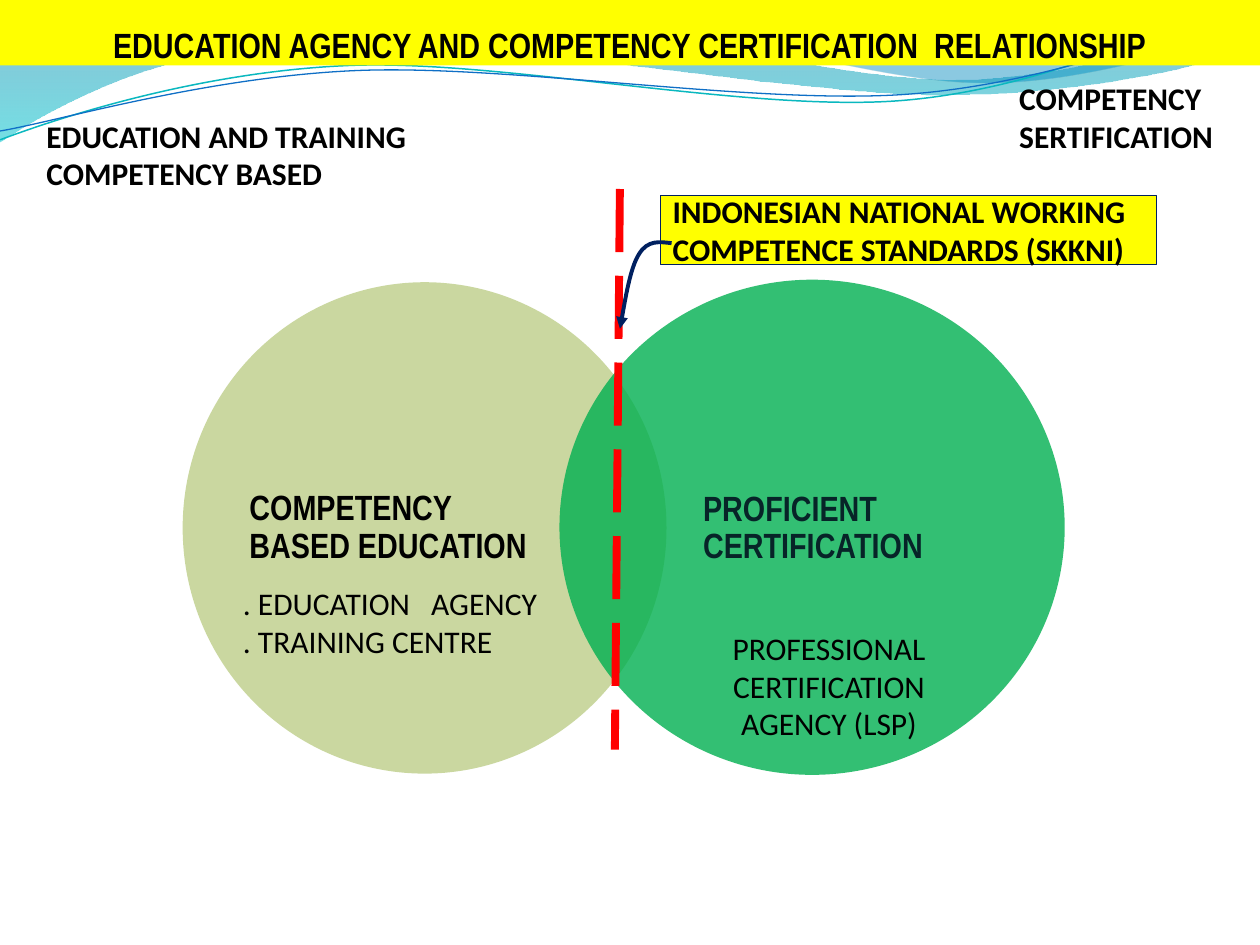
from math import cos, radians, sin

from lxml import etree
from pptx import Presentation
from pptx.dml.color import RGBColor
from pptx.enum.dml import MSO_LINE
from pptx.enum.shapes import MSO_CONNECTOR, MSO_SHAPE
from pptx.enum.text import MSO_ANCHOR, PP_ALIGN
from pptx.oxml.ns import qn
from pptx.util import Inches, Pt

RECT, OVAL = MSO_SHAPE.RECTANGLE, MSO_SHAPE.OVAL
STRAIGHT, LONG_DASH = MSO_CONNECTOR.STRAIGHT, MSO_LINE.LONG_DASH
MIDDLE, BOTTOM = MSO_ANCHOR.MIDDLE, MSO_ANCHOR.BOTTOM
LEFT, CENTER = PP_ALIGN.LEFT, PP_ALIGN.CENTER

BLACK = RGBColor(0x00, 0x00, 0x00)
YELLOW = RGBColor(0xFF, 0xFF, 0x00)
RED = RGBColor(0xFF, 0x00, 0x00)
NAVY = RGBColor(0x00, 0x20, 0x60)
OLIVE = RGBColor(0x96, 0xB0, 0x42)
GREEN = RGBColor(0x00, 0xB0, 0x50)
DARK_TEAL = RGBColor(0x07, 0x24, 0x28)
OCEAN = RGBColor(0x00, 0x74, 0xA1)
AQUA = RGBColor(0x00, 0xC6, 0xCF)
TEAL = RGBColor(0x00, 0xA1, 0xA9)
AZURE = RGBColor(0x00, 0x8B, 0xBF)
TURQUOISE = RGBColor(0x0A, 0xB8, 0xBF)
BLUE = RGBColor(0x0F, 0x6F, 0xC6)

HEADING = dict(name="Arial Narrow", size=Pt(20), bold=True)
LABEL = dict(name="Calibri", size=Pt(18), bold=True)
BODY = dict(name="Calibri", size=Pt(18), bold=False)
NO_INSETS = (0, 0, 0, 0)
WAVE_TILT = -2.7
WAVE_CENTER = (4.99, 0.58)

# Each path is a start point followed by segments: a point for a straight
# line, or two control points and an end point for a Bezier curve.
LEFT_WAVE = [
    (0, -0.01), (4.4, -0.01),
    (4.76, 0.17, 6.64, 0.63, 7.58, 0.63), (8.53, 0.63, 9.58, 0.26, 10, 0.09),
    (10.01, 0.36),
    (9.83, 0.44, 8.7, 0.76, 7.46, 0.75), (6.22, 0.75, 3.82, 0.28, 2.57, 0.34),
    (1.29, 0.35, 0.46, 0.83, -0.01, 1.13), (0, -0.01),
]
RIGHT_WAVE = [
    (4.79, -0.01),
    (5.09, 0.11, 6.82, 0.62, 7.69, 0.65), (8.56, 0.69, 9.61, 0.32, 10, 0.21),
    (10, 0), (4.79, -0.01),
]
TURQUOISE_LINE = [
    (0, 1.11),
    (0.48, 0.93, 1.58, 0.57, 2.77, 0.52), (3.95, 0.47, 5.93, 0.89, 7.13, 0.8),
    (8.33, 0.71, 9.38, 0.15, 9.98, -0.02),
]
BLUE_LINE = [
    (0, 1.04),
    (0.47, 0.96, 1.64, 0.61, 2.83, 0.56), (4.03, 0.51, 5.97, 0.83, 7.17, 0.75),
    (8.36, 0.67, 9.41, 0.21, 10, 0.06),
]
CALLOUT_ARROW = [
    (5.33, 1.93),
    (5.24, 1.92, 5.14, 1.9, 5.07, 2.02), (5, 2.13, 4.92, 2.61, 4.92, 2.61),
    (4.92, 2.61),
]


def set_opacity(sp, percents):
    """Give the fill colours of a shape their opacity, in order."""
    colors = sp._element.spPr.iter(qn("a:srgbClr"))
    for color, percent in zip(colors, percents):
        etree.SubElement(color, qn("a:alpha"), val=str(percent * 1000))


def level(x, y, tilt):
    """Turn a point back by the tilt that its shape will get."""
    cx, cy = WAVE_CENTER
    a, dx, dy = radians(-tilt), x - cx, y - cy
    return cx + dx * cos(a) - dy * sin(a), cy + dx * sin(a) + dy * cos(a)


def add_outline(s, path, close, tilt=0):
    segments = [[tuple(map(Inches, level(x, y, tilt))) for x, y in zip(seg[::2], seg[1::2])]
                for seg in path]
    builder = s.shapes.build_freeform(*segments[0][0])
    builder.add_line_segments([seg[-1] for seg in segments[1:]], close=close)
    sp = builder.convert_to_shape()
    sp.shadow.inherit = False
    lines = list(sp._element.spPr.iter(qn("a:lnTo")))
    for line, seg in zip(lines, segments[1:]):
        if len(seg) == 3:
            curve = etree.Element(qn("a:cubicBezTo"))
            for x, y in seg:
                etree.SubElement(curve, qn("a:pt"), x=str(x - sp.left), y=str(y - sp.top))
            line.getparent().replace(line, curve)
    sp.rotation = tilt
    return sp


def add_wave(s, path, stops):
    """Add a downward gradient area; stops are (position, colour, opacity)."""
    sp = add_outline(s, path, True)
    sp.line.fill.background()
    sp.fill.gradient()
    sp.fill.gradient_angle = 270
    for stop, (position, color, _) in zip(sp.fill.gradient_stops, stops):
        stop.position = position
        stop.color.rgb = color
    set_opacity(sp, [opacity for _, _, opacity in stops])


def add_curve(s, path, color, width, tilt=0):
    sp = add_outline(s, path, False, tilt)
    sp.fill.background()
    sp.line.color.rgb = color
    sp.line.width = Pt(width)
    return sp


def add_panel(s, shape, box, fill, line=None, opacity=None):
    sp = s.shapes.add_shape(shape, *map(Inches, box))
    sp.shadow.inherit = False
    sp.fill.solid()
    sp.fill.fore_color.rgb = fill
    if opacity:
        set_opacity(sp, [opacity])
    if line:
        sp.line.color.rgb = line
        sp.line.width = Pt(0.75)
    else:
        sp.line.fill.background()
    return sp


def write(sp, lines, font, color=BLACK, align=LEFT, anchor=MIDDLE,
          insets=(0.1, 0.05, 0.1, 0.05), spacing=None):
    tf = sp.text_frame
    tf.word_wrap = True
    tf.vertical_anchor = anchor
    for side, inset in zip(("left", "top", "right", "bottom"), insets):
        setattr(tf, f"margin_{side}", Inches(inset))
    for i, text in enumerate(lines):
        p = tf.add_paragraph() if i else tf.paragraphs[0]
        p.alignment = align
        p.line_spacing = spacing
        r = p.add_run()
        r.text = text
        for key, value in font.items():
            setattr(r.font, key, value)
        r.font.color.rgb = color


def add_text(s, box, lines, font, **options):
    write(s.shapes.add_textbox(*map(Inches, box)), lines, font, **options)


def add_divider(s, start, end):
    line = s.shapes.add_connector(STRAIGHT, *map(Inches, start + end))
    line.line.color.rgb = RED
    line.line.width = Pt(4.5)
    line.line.dash_style = LONG_DASH
    etree.SubElement(line._element.spPr, qn("a:effectLst"))


def add_venn(s):
    heading = dict(insets=NO_INSETS, spacing=0.9)
    add_panel(s, OVAL, (1.45, 2.24, 3.84, 3.9), OLIVE, opacity=50)
    add_text(s, (1.98, 2.7, 2.21, 2.98), ["COMPETENCY BASED EDUCATION"], HEADING, **heading)
    add_panel(s, OVAL, (4.44, 2.22, 4.01, 3.93), GREEN, opacity=80)
    add_text(s, (5.58, 2.69, 2.31, 3.01), ["PROFICIENT CERTIFICATION"], HEADING,
             color=DARK_TEAL, **heading)


def main():
    prs = Presentation()
    prs.slide_width, prs.slide_height = Inches(10), Inches(7.5)
    s = prs.slides.add_slide(prs.slide_layouts[6])

    add_wave(s, LEFT_WAVE, [(0, OCEAN, 45), (1, AQUA, 55)])
    add_wave(s, RIGHT_WAVE, [(0, TEAL, 30), (0.8, AZURE, 45)])
    add_curve(s, TURQUOISE_LINE, TURQUOISE, 0.85, WAVE_TILT)
    add_curve(s, BLUE_LINE, BLUE, 0.75, WAVE_TILT)

    title = add_panel(s, RECT, (0, 0, 10, 0.52), YELLOW)
    write(title, ["EDUCATION AGENCY AND COMPETENCY CERTIFICATION  RELATIONSHIP"], HEADING,
          align=CENTER, anchor=BOTTOM, insets=(0, 0.05, 0, 0))

    add_venn(s)
    add_divider(s, (4.92, 1.5), (4.88, 5.95))

    add_text(s, (7.99, 0.6, 1.81, 0.65), ["COMPETENCY SERTIFICATION"], LABEL)
    add_text(s, (0.27, 0.6, 4, 1.25), ["EDUCATION AND TRAINING COMPETENCY BASED"], LABEL)
    add_text(s, (1.83, 4.54, 3.05, 0.79), [". EDUCATION   AGENCY", ". TRAINING CENTRE"], BODY)
    add_text(s, (5.31, 4.85, 2.54, 1.18), ["PROFESSIONAL CERTIFICATION AGENCY (LSP)"], BODY,
             align=CENTER)

    callout = add_panel(s, RECT, (5.24, 1.55, 3.94, 0.55), YELLOW, line=NAVY)
    write(callout, ["INDONESIAN NATIONAL WORKING COMPETENCE STANDARDS (SKKNI)"], LABEL)
    arrow = add_curve(s, CALLOUT_ARROW, NAVY, 2.25)
    etree.SubElement(arrow.line._get_or_add_ln(), qn("a:tailEnd"), type="triangle")

    prs.save("out.pptx")


if __name__ == "__main__":
    main()
